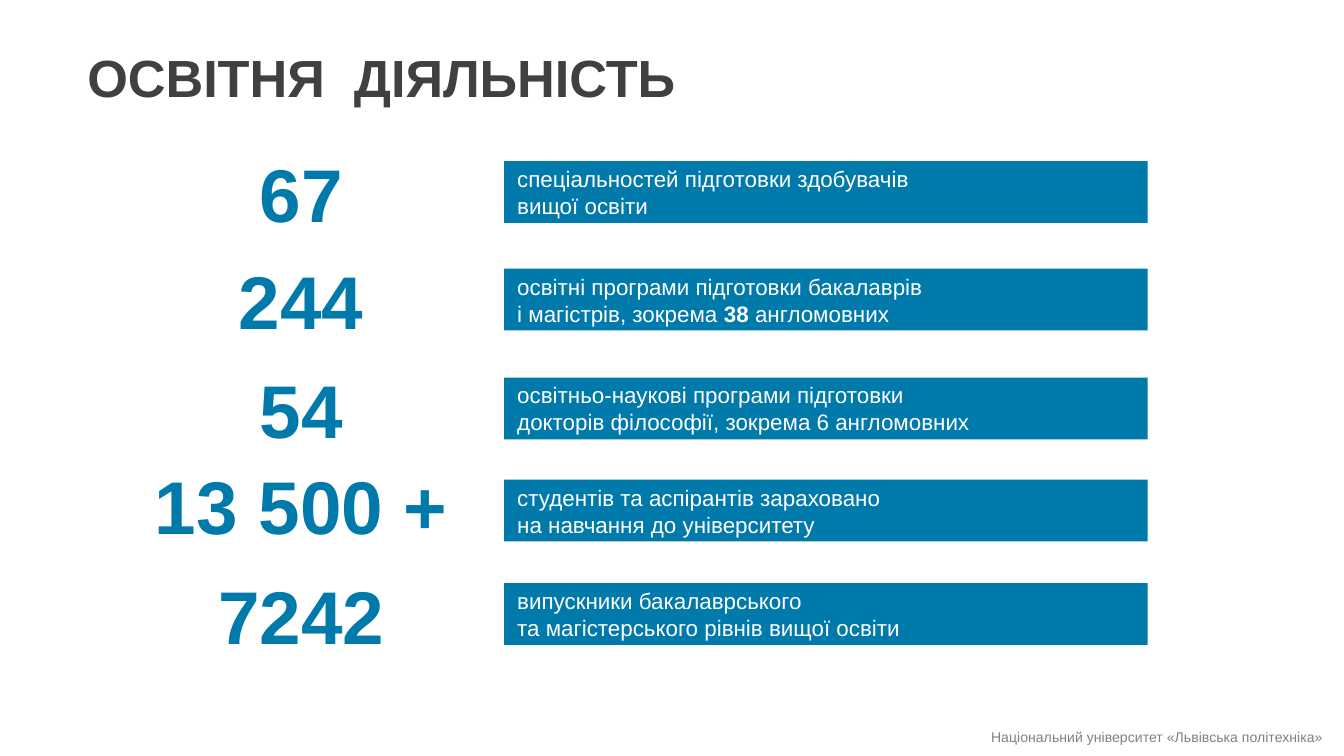
from pptx import Presentation
from pptx.dml.color import RGBColor
from pptx.enum.shapes import MSO_SHAPE
from pptx.enum.text import MSO_ANCHOR, PP_ALIGN
from pptx.util import Inches, Pt

BLUE = RGBColor(0x00, 0x79, 0xAB)
WHITE = RGBColor(0xFF, 0xFF, 0xFF)
DARK_GREY = RGBColor(0x40, 0x40, 0x40)
MID_GREY = RGBColor(0x80, 0x80, 0x80)

RECTANGLE = MSO_SHAPE.RECTANGLE
MIDDLE, TOP = MSO_ANCHOR.MIDDLE, MSO_ANCHOR.TOP
LEFT, CENTER, RIGHT = PP_ALIGN.LEFT, PP_ALIGN.CENTER, PP_ALIGN.RIGHT

FONT = "Arial"
BAR_HEIGHT = 0.46
NUMBER_HEIGHT = 0.71

# Bar top, number, line spacing of the number, paragraphs of (text, bold) spans
ROWS = [
    (1.2, "67", 1.0, [
        [("спеціальностей підготовки здобувачів \nвищої освіти", False)],
    ]),
    (2.0, "244", 1.0, [
        [("освітні програми підготовки бакалаврів \nі магістрів, зокрема ", False),
         ("38 ", True), ("англомовних", False)],
    ]),
    (2.81, "54", 1.0, [
        [("освітньо-наукові програми підготовки", False)],
        [("докторів філософії, зокрема 6 англомовних", False)],
    ]),
    (3.57, "13 500 +", 0.9, [
        [("студентів та аспірантів зараховано \nна навчання до університету", False)],
    ]),
    (4.34, "7242", 1.0, [
        [("випускники бакалаврського \nта магістерського рівнів вищої освіти", False)],
    ]),
]


def add_span(para, text, size, color, bold=False):
    span = para.add_run()
    span.text = text
    span.font.name = FONT
    span.font.size = Pt(size)
    span.font.bold = bold
    span.font.color.rgb = color
    return span


def add_text_box(page, left, top, width, height, align=LEFT, anchor=TOP, wrap=True):
    """Add an empty box with narrow margins and return its paragraph."""
    box = page.shapes.add_textbox(
        Inches(left), Inches(top), Inches(width), Inches(height))
    frame = box.text_frame
    frame.word_wrap = wrap
    frame.vertical_anchor = anchor
    frame.margin_left = frame.margin_right = Inches(0.04)
    frame.margin_top = frame.margin_bottom = Inches(0.02)
    para = frame.paragraphs[0]
    para.alignment = align
    return para


def add_bar(page, top, paragraphs):
    bar = page.shapes.add_shape(
        RECTANGLE, Inches(3.75), Inches(top), Inches(4.79), Inches(BAR_HEIGHT))
    bar.shadow.inherit = False
    bar.fill.solid()
    bar.fill.fore_color.rgb = BLUE
    bar.line.fill.background()
    frame = bar.text_frame
    frame.word_wrap = True
    frame.vertical_anchor = MIDDLE
    for index, spans in enumerate(paragraphs):
        para = frame.add_paragraph() if index else frame.paragraphs[0]
        para.alignment = LEFT
        for text, bold in spans:
            for number, line in enumerate(text.split("\n")):
                if number:
                    para.add_line_break()
                add_span(para, line, 12, WHITE, bold)


def add_number(page, bar_top, text, spacing):
    """Add a large number centred vertically on its bar."""
    top = bar_top + (BAR_HEIGHT - NUMBER_HEIGHT) / 2
    para = add_text_box(page, 1.02, top, 2.44, NUMBER_HEIGHT, CENTER, MIDDLE)
    para.line_spacing = spacing
    add_span(para, text, 40, BLUE, bold=True)


def add_title(page):
    para = add_text_box(page, 0.61, 0.32, 4.5, 0.51, wrap=False)
    add_span(para, "ОСВІТНЯ  ДІЯЛЬНІСТЬ", 28, DARK_GREY, bold=True)


def add_footer(page):
    para = add_text_box(page, 6.49, 5.38, 3.39, 0.19, RIGHT)
    span = add_span(
        para, "Національний університет «Львівська політехніка»", 13, MID_GREY)
    span._r.get_or_add_rPr().set("baseline", "30000")


def main():
    deck = Presentation()
    deck.slide_width = Inches(10)
    deck.slide_height = deck.slide_width * 9 // 16
    page = deck.slides.add_slide(deck.slide_layouts[6])
    add_footer(page)
    add_title(page)
    for top, number, spacing, paragraphs in ROWS:
        add_bar(page, top, paragraphs)
        add_number(page, top, number, spacing)
    deck.save("out.pptx")


if __name__ == "__main__":
    main()
